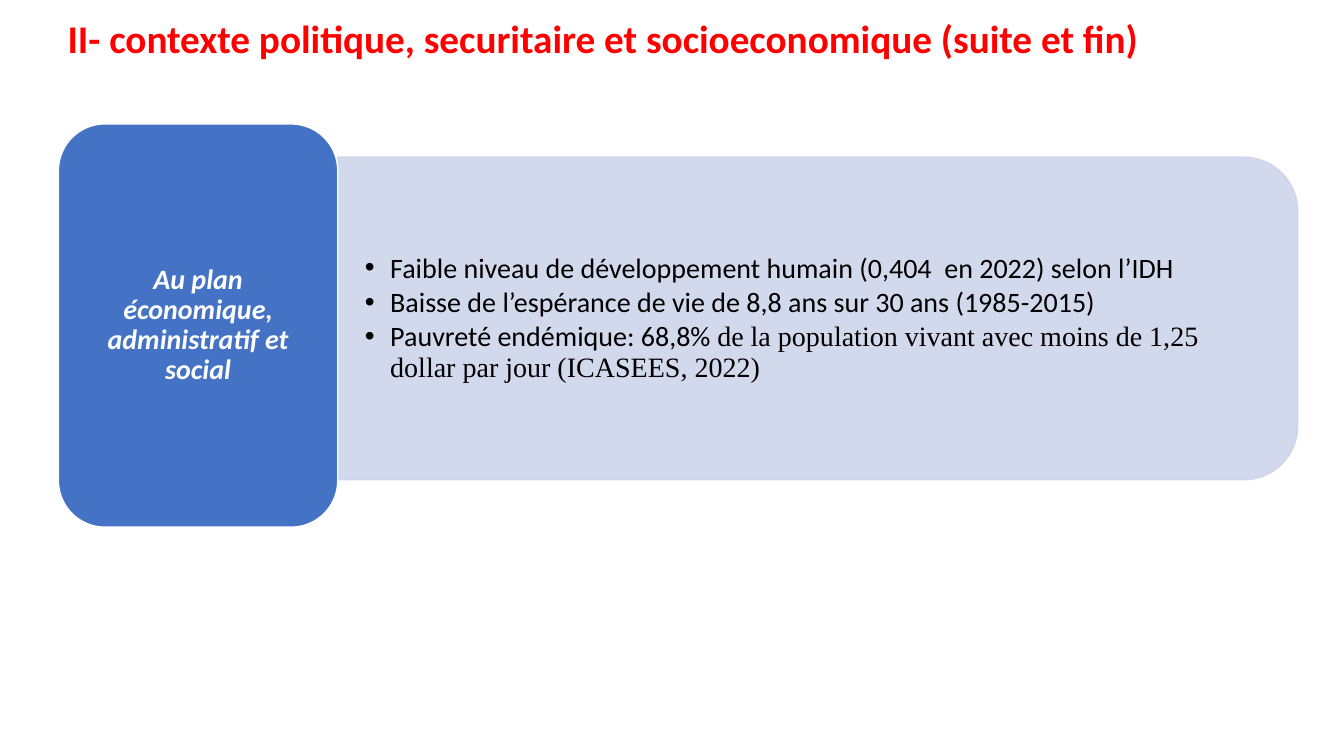
from lxml import etree
from pptx import Presentation
from pptx.dml.color import RGBColor
from pptx.enum.shapes import MSO_SHAPE as SHAPE
from pptx.enum.text import MSO_ANCHOR as ANCHOR, MSO_AUTO_SIZE as AUTO, PP_ALIGN as ALIGN
from pptx.oxml.ns import qn
from pptx.util import Inches, Pt

# Content
TITLE = "II- contexte politique, securitaire et socioeconomique (suite et fin)"
LABEL = "Au plan économique, administratif et social"
SANS, SERIF = "Calibri", "Times New Roman"
FACTS = [
    [("Faible niveau de développement humain (0,404  en 2022) selon l’IDH", SANS)],
    [("Baisse de l’espérance de vie de 8,8 ans sur 30 ans (1985-2015)", SANS)],
    [("Pauvreté endémique: 68,8% ", SANS),
     ("de la population vivant avec moins de 1,25 dollar par jour (ICASEES, 2022)", SERIF)],
]

# Layout in inches: the label stands left, the panel starts at its right edge
SLIDE_W, SLIDE_H = 13.33, 7.5
LABEL_X, LABEL_Y, LABEL_W, LABEL_H = 0.58, 1.23, 2.77, 4
PANEL_X = LABEL_X + LABEL_W
PANEL_W, PANEL_H, PANEL_MID = 9.52, 3.2, 3.16
TEXT_W, TEXT_H = 9.36, 2.89


def color(value):
    return RGBColor.from_string(value)


def place(sp, x, y, w, h):
    sp.left, sp.top, sp.width, sp.height = (Inches(v) for v in (x, y, w, h))


def set_frame(tf, dx, dy):
    tf.word_wrap = True
    tf.auto_size = AUTO.NONE
    tf.vertical_anchor = ANCHOR.MIDDLE
    tf.margin_left = tf.margin_right = Inches(dx)
    tf.margin_top = tf.margin_bottom = Inches(dy)


def add_text(p, text, font=SANS, size=20, fill="000000", bold=False, italic=False,
             align=ALIGN.LEFT, after=0):
    p.alignment = align
    p.line_spacing = 0.9
    p.space_before, p.space_after = Pt(0), Pt(after)
    r = p.add_run()
    r.text = text
    r.font.name, r.font.size = font, Pt(size)
    r.font.bold, r.font.italic = bold, italic
    r.font.color.rgb = color(fill)


def add_bullet(p, indent):
    pPr = p._p.get_or_add_pPr()
    pPr.set("marL", str(Inches(indent)))
    pPr.set("indent", str(-Inches(indent)))
    etree.SubElement(pPr, qn("a:buChar")).set("char", "•")


def add_block(kind, x, y, w, h, fill, line):
    sp = s.shapes.add_shape(kind, Inches(x), Inches(y), Inches(w), Inches(h))
    sp.shadow.inherit = False
    sp.fill.solid()
    sp.fill.fore_color.rgb = color(fill)
    sp.line.color.rgb = color(line)
    sp.line.width = Pt(1)
    return sp


prs = Presentation()
prs.slide_width, prs.slide_height = Inches(SLIDE_W), Inches(SLIDE_H)
s = prs.slides.add_slide(prs.slide_layouts[1])
title, body = s.placeholders

# Title
place(title, 0.57, 0.05, 12.3, 0.7)
set_frame(title.text_frame, 0.1, 0.05)
add_text(title.text_frame.paragraphs[0], TITLE, size=28, fill="FF0000", bold=True)

# Panel: turned a quarter so that its round corners face right, sent behind the list
panel = add_block(SHAPE.ROUND_2_SAME_RECTANGLE, PANEL_X + (PANEL_W - PANEL_H) / 2,
                  PANEL_MID - PANEL_W / 2, PANEL_H, PANEL_W, "CFD5EA", "CFD5EA")
panel.rotation = 90
for clr in panel._element.spPr.iter(qn("a:srgbClr")):
    etree.SubElement(clr, qn("a:alpha")).set("val", "90000")
body._element.addprevious(panel._element)

# List of facts
place(body, PANEL_X, PANEL_MID - TEXT_H / 2, TEXT_W, TEXT_H)
tf = body.text_frame
set_frame(tf, 0.27, 0.14)
for i, runs in enumerate(FACTS):
    p = tf.add_paragraph() if i else tf.paragraphs[0]
    for text, font in runs:
        add_text(p, text, font=font, after=3)
    add_bullet(p, 0.25)

# Label
label = add_block(SHAPE.ROUNDED_RECTANGLE, LABEL_X, LABEL_Y, LABEL_W, LABEL_H,
                  "4472C4", "FFFFFF")
set_frame(label.text_frame, 0.08, 0.04)
add_text(label.text_frame.paragraphs[0], LABEL, fill="FFFFFF", bold=True, italic=True,
         align=ALIGN.CENTER)

prs.save("out.pptx")
